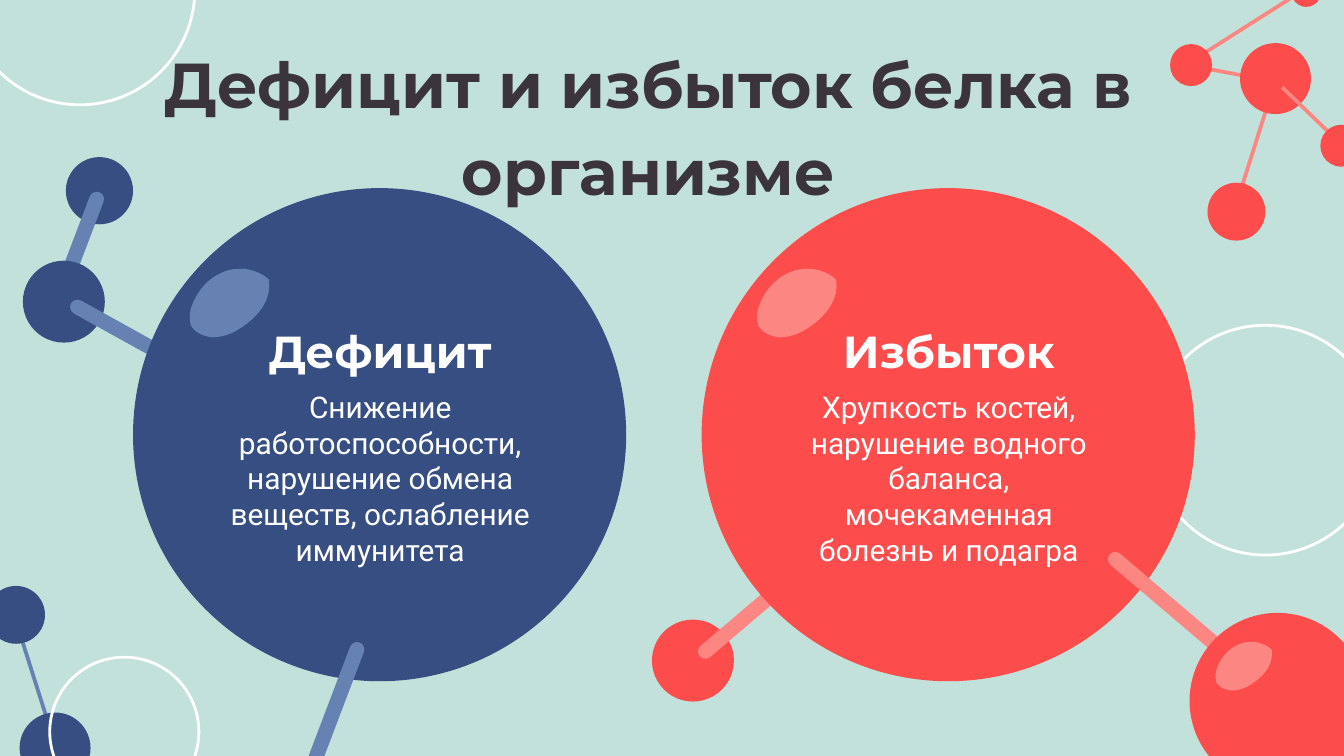
from dataclasses import dataclass

import pptx
import pptx.dml.color
import pptx.enum.shapes
import pptx.enum.text
import pptx.oxml.xmlchemy
import pptx.util
from lxml import etree
from pptx.oxml import ns

Pt = pptx.util.Pt
SHAPE = pptx.enum.shapes.MSO_SHAPE
ANCHOR = pptx.enum.text.MSO_ANCHOR


@dataclass(frozen=True)
class Theme:
    mint: str = "C2E1DA"
    navy: str = "364E82"
    steel: str = "6582B2"
    red: str = "FC4C4C"
    pink: str = "FC8782"
    white: str = "FFFFFF"
    ink: str = "3B343B"
    head_font: str = "Montserrat"
    body_font: str = "Roboto"
    title_size: float = 34
    head_size: float = 24
    body_size: float = 16
    ring_width: float = 1.5
    bond_width: float = 2
    rod_width: float = 7.9


T = Theme()
SMALL, MEDIUM, BIG, BALL = 36, 43.9, 264.2, 94.3

GLEAM_START = (28.8, 0.7)
GLEAM_CURVES = [
    ((25.2, 0.7), (21.6, 0.7), (18, 2.2)),
    ((10.1, 5), (3.6, 12.2), (0.7, 20.2)),
    ((-0.7, 23.8), (-0.7, 27.4), (0, 31)),
    ((2.2, 34.6), (5.8, 36.7), (11.5, 37.4)),
    ((15.8, 37.4), (20.9, 36), (24.5, 33.8)),
    ((34.6, 28.1), (43.9, 18), (41.8, 6.5)),
    ((38.2, 2.9), (33.1, 1.4), (28.8, 0.7)),
]


def rgb(color):
    return pptx.dml.color.RGBColor.from_string(color)


def paint(sp, color):
    sp.shadow.inherit = False
    sp.fill.solid()
    sp.fill.fore_color.rgb = rgb(color)
    sp.line.fill.background()


def centred(s, kind, x, y, w, h):
    """Add a preset shape whose middle is at x, y."""
    return s.shapes.add_shape(kind, Pt(x - w / 2), Pt(y - h / 2), Pt(w), Pt(h))


def add_atom(s, x, y, d, color):
    paint(centred(s, SHAPE.OVAL, x, y, d, d), color)


def add_ring(s, x, y, d):
    sp = centred(s, SHAPE.OVAL, x, y, d, d)
    sp.shadow.inherit = False
    sp.fill.background()
    sp.line.color.rgb = rgb(T.white)
    sp.line.width = Pt(T.ring_width)


def add_rod(s, x, y, length, angle, color):
    sp = centred(s, SHAPE.ROUNDED_RECTANGLE, x, y, length, T.rod_width)
    sp.adjustments[0] = 0.5
    sp.rotation = angle
    paint(sp, color)


def add_bond(s, x1, y1, x2, y2, color):
    c = s.shapes.add_connector(
        pptx.enum.shapes.MSO_CONNECTOR.STRAIGHT, Pt(x1), Pt(y1), Pt(x2), Pt(y2))
    c.line.color.rgb = rgb(color)
    c.line.width = Pt(T.bond_width)
    etree.SubElement(c._element.spPr, ns.qn("a:effectLst"))


def bezier(p0, p1, p2, p3, steps=10):
    """Yield points along a cubic curve, leaving out its start."""
    for i in range(1, steps + 1):
        t = i / steps
        u = 1 - t
        yield tuple(u**3 * a + 3 * u * u * t * b + 3 * u * t * t * c + t**3 * d
                    for a, b, c, d in zip(p0, p1, p2, p3))


def add_gleam(s, x, y, color, scale=1):
    points = [GLEAM_START]
    for curve in GLEAM_CURVES:
        points.extend(bezier(points[-1], *curve))
    points = [(Pt(x + px * scale), Pt(y + py * scale)) for px, py in points]
    builder = s.shapes.build_freeform(*points[0])
    builder.add_line_segments(points[1:], close=True)
    paint(builder.convert_to_shape(), color)


def write(sp, text, font, size, color, bold=False, anchor=ANCHOR.TOP, spacing=1.0):
    tf = sp.text_frame
    tf.word_wrap = True
    tf.auto_size = pptx.enum.text.MSO_AUTO_SIZE.NONE
    tf.vertical_anchor = anchor
    tf.margin_left = tf.margin_right = tf.margin_top = tf.margin_bottom = Pt(7.2)
    p = tf.paragraphs[0]
    p.alignment = pptx.enum.text.PP_ALIGN.CENTER
    p.line_spacing = spacing
    r = p.add_run()
    r.text = text
    r.font.name = font
    r.font.size = Pt(size)
    r.font.bold = bold
    r.font.color.rgb = rgb(color)


def add_title(s, text):
    sp = s.shapes.title
    sp.left, sp.top, sp.width, sp.height = Pt(70.6), Pt(10.8), Pt(553.7), Pt(51.1)
    write(sp, text, T.head_font, T.title_size, T.ink, True, spacing=1.15)
    s.shapes._spTree.append(sp._element)  # bring in front of the molecules


def add_card(s, x, heading, body):
    sp = s.shapes.add_textbox(Pt(x), Pt(165.6), Pt(181.4), Pt(43.9))
    write(sp, heading, T.head_font, T.head_size, T.white, True, ANCHOR.BOTTOM)
    sp = s.shapes.add_textbox(Pt(x), Pt(200.9), Pt(181.4), Pt(99.4))
    write(sp, body, T.body_font, T.body_size, T.white)


def add_background(s):
    s.background.fill.solid()
    s.background.fill.fore_color.rgb = rgb(T.mint)

    add_bond(s, 8.3, 331.9, 27.7, 393.1, T.steel)
    add_atom(s, 8.6, 329.4, 31, T.navy)
    add_atom(s, 29.5, 400.7, 38, T.navy)

    add_bond(s, 640, 35.6, 678.2, 42.8, T.pink)
    add_bond(s, 681.1, 50, 662, 110.5, T.pink)
    add_atom(s, 662.4, 113.4, 31, T.red)
    add_atom(s, 683.3, 42.1, 38, T.red)
    add_bond(s, 686.9, 46.8, 717.5, 76.3, T.pink)
    add_atom(s, 718.6, 78.1, 22.5, T.red)
    add_bond(s, 698.4, -5.4, 636.8, 33.8, T.pink)
    add_atom(s, 699.8, -4.3, 16, T.red)
    add_atom(s, 638.1, 34.9, 22.5, T.red)

    add_ring(s, 42.8, -5.4, 123.1)
    add_ring(s, 66.6, 392, 79.9)
    add_ring(s, 677.9, 235.8, 123.1)


def add_deficit_molecule(s):
    add_atom(s, 53.3, 102.2, SMALL, T.navy)
    add_rod(s, 43.2, 129.2, 56.2, 290.8, T.steel)
    add_atom(s, 34.2, 161.6, MEDIUM, T.navy)
    add_rod(s, 72.7, 181.8, 79.2, 29, T.steel)
    add_atom(s, 203.4, 232.9, BIG, T.navy)
    add_gleam(s, 102.2, 143.3, T.steel)
    add_rod(s, 178.6, 381.2, 79.2, 290.8, T.steel)


def add_excess_molecule(s):
    add_atom(s, 371.2, 353.9, MEDIUM, T.red)
    add_rod(s, 408.6, 322.9, 88.6, 139.6, T.pink)
    add_atom(s, 508, 232.9, BIG, T.red)
    add_gleam(s, 406.1, 143.3, T.pink)
    add_rod(s, 628.2, 325.8, 88.6, 40.4, T.pink)
    add_atom(s, 684.4, 375.5, BALL, T.red)
    add_gleam(s, 651.6, 343.4, T.pink, scale=0.71)


def main():
    prs = pptx.Presentation()
    prs.slide_width, prs.slide_height = Pt(720), Pt(405)
    s = prs.slides.add_slide(prs.slide_layouts[5])
    add_background(s)
    add_deficit_molecule(s)
    add_excess_molecule(s)
    add_title(s, "Дефицит и избыток белка в организме")
    add_card(s, 113, "Дефицит", "Снижение работоспособности, "
             "нарушение обмена веществ, ослабление иммунитета")
    add_card(s, 417.6, "Избыток", "Хрупкость костей, нарушение водного "
             "баланса, мочекаменная болезнь и подагра")
    prs.save("out.pptx")


if __name__ == "__main__":
    main()
